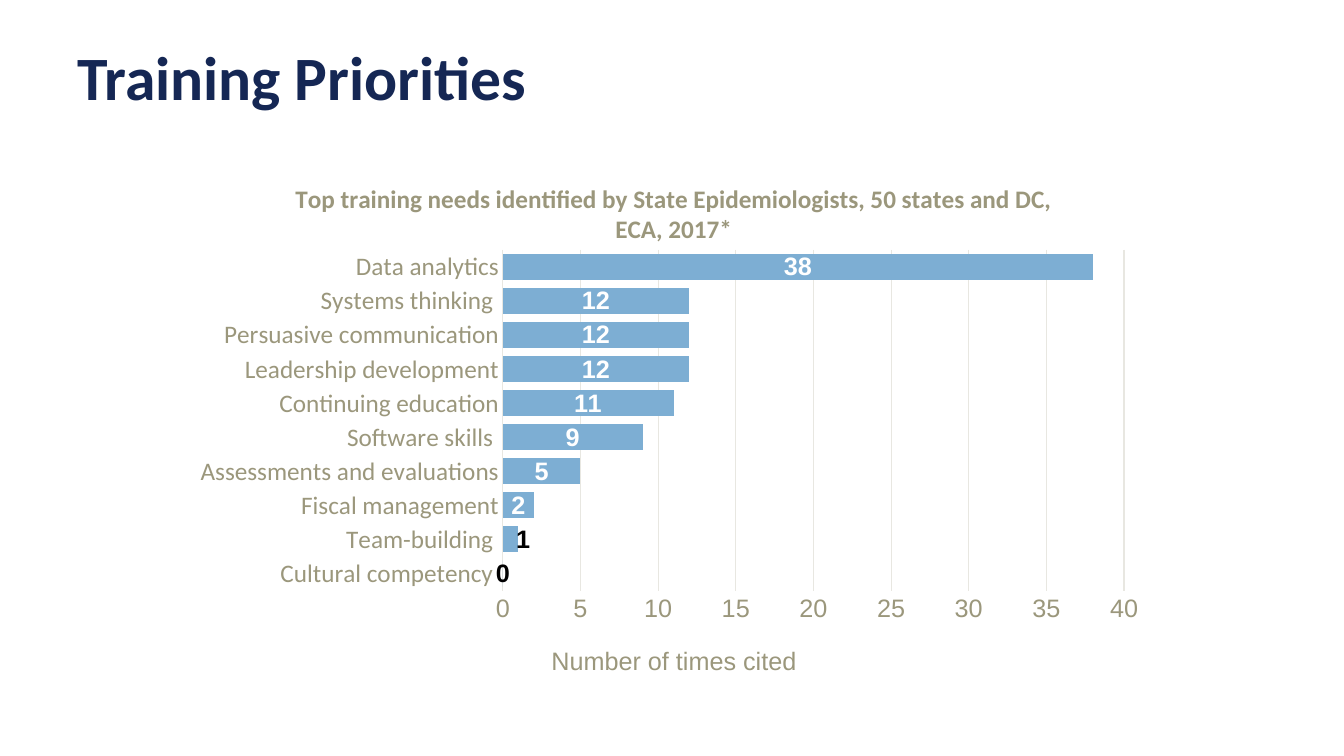
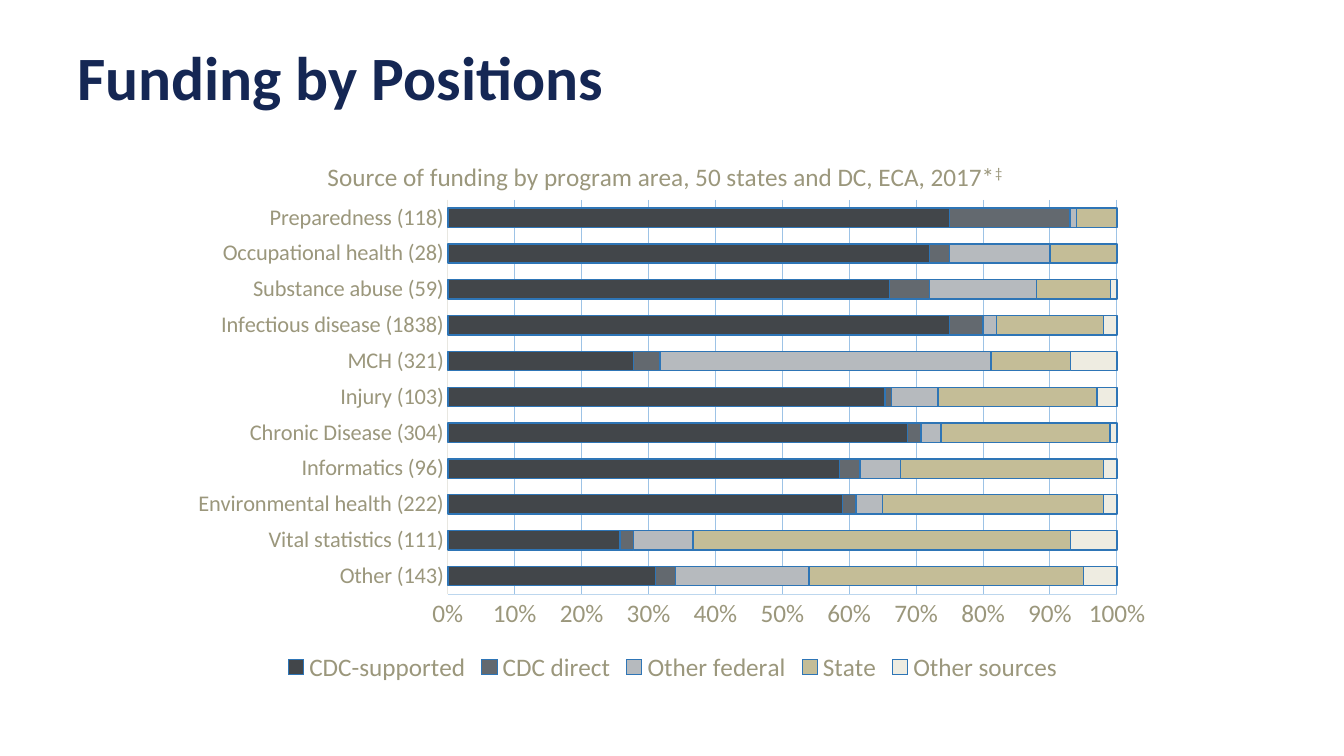
"""Build two survey slides, each with a title and a bar chart."""
from lxml import etree
from pptx import Presentation
from pptx.chart.data import CategoryChartData
from pptx.dml.color import RGBColor
from pptx.enum.chart import XL_CHART_TYPE, XL_LABEL_POSITION, XL_LEGEND_POSITION, XL_TICK_MARK
from pptx.enum.text import MSO_ANCHOR, MSO_AUTO_SIZE, PP_ALIGN
from pptx.oxml.ns import qn
from pptx.util import Inches, Pt

CLUSTERED, STACKED = XL_CHART_TYPE.BAR_CLUSTERED, XL_CHART_TYPE.BAR_STACKED_100
CENTER, BOTTOM, NO_TICK = XL_LABEL_POSITION.CENTER, XL_LEGEND_POSITION.BOTTOM, XL_TICK_MARK.NONE
LEFT, MIDDLE, NO_AUTOFIT = PP_ALIGN.LEFT, MSO_ANCHOR.MIDDLE, MSO_AUTO_SIZE.NONE

COLORS = {
    "navy": "152754", "olive": "9B977C", "body": "585543", "rule": "E8E7E1",
    "blue": "7DAED3", "outline": "2E75B6", "pale blue": "BDD7EE", "grid blue": "9DC3E6",
    "charcoal": "42464A", "slate": "63696F", "silver": "B6BABE", "sand": "C4BD97",
    "ivory": "EEECE1", "white": "FFFFFF", "black": "000000",
}
TITLE_BOX = (5, 2.53, 90, 15.07)

SLIDES = [
    {
        "title": "Training Priorities",
        "type": CLUSTERED, "box": (13.5, 20.13, 72.68, 71.07), "gap": 30, "overlap": 0,
        "plot": (32.9, 18.2, 63.6, 63.4),
        "heading": "Top training needs identified by State Epidemiologists, 50 states and DC, ECA, 2017*",
        "heading mark": "", "heading bold": True, "heading place": (11.2, 4.5),
        "categories": [
            "Cultural competency ", "Team-building ", "Fiscal management",
            "Assessments and evaluations", "Software skills ", "Continuing education",
            "Leadership development", "Persuasive communication", "Systems thinking ",
            "Data analytics"],
        "category size": 18, "value font": "Arial", "maximum": 40, "step": 5, "format": "General",
        "axis line": None, "grid line": "rule", "series line": None,
        "series": [("Series 1", "blue", [0, 1, 2, 5, 9, 11, 12, 12, 12, 38])],
        "axis title": "Number of times cited", "axis title place": (37.4, 90.8),
        "dark label shifts": {0: 0, 1: 1.3}, "legend": False,
    },
    {
        "title": "Funding by Positions",
        "type": STACKED, "box": (13.35, 17.47, 73.43, 73.47), "gap": 86, "overlap": 100,
        "plot": (27.2, 12.2, 67.8, 71),
        "heading": "Source of funding by program area, 50 states and DC, ECA, 2017*",
        "heading mark": "‡", "heading bold": False, "heading place": (14.7, 4.5),
        "categories": [
            "Other (143)", "Vital statistics (111)", "Environmental health (222)",
            "Informatics (96)", "Chronic Disease (304)", "Injury (103)", "MCH (321)",
            "Infectious disease (1838)", "Substance abuse (59)", "Occupational health (28)",
            "Preparedness (118)"],
        "category size": 16, "value font": "Calibri", "maximum": 1, "step": 0.1, "format": "0%",
        "axis line": "pale blue", "grid line": "grid blue", "series line": "outline",
        "series": [
            ("CDC-supported", "charcoal", [31, 26, 59, 58, 68, 66, 28, 75, 66, 72, 75]),
            ("CDC direct", "slate", [3, 2, 2, 3, 2, 1, 4, 5, 6, 3, 18]),
            ("Other federal", "silver", [20, 9, 4, 6, 3, 7, 50, 2, 16, 15, 1]),
            ("State", "sand", [41, 57, 33, 30, 25, 24, 12, 16, 11, 10, 6]),
            ("Other sources", "ivory", [5, 7, 2, 2, 1, 3, 7, 2, 1, 0, 0])],
        "axis title": None, "dark label shifts": {}, "legend": True,
    },
]


def style(font, color, size=18, name="Calibri", bold=False):
    """Set the look of a font."""
    for attribute, value in {"size": Pt(size), "name": name, "bold": bold}.items():
        setattr(font, attribute, value)
    font.color.rgb = RGBColor.from_string(COLORS[color])


def arrange(parent, index, shares, edge=True):
    """Give a chart part a manual layout, in percent of the chart."""
    for old in parent.findall(qn("c:layout")):
        parent.remove(old)
    layout = etree.Element(qn("c:layout"))
    manual = etree.SubElement(layout, qn("c:manualLayout"))
    settings = [("layoutTarget", "inner")] if len(shares) == 4 else []
    if edge:
        settings += [("xMode", "edge"), ("yMode", "edge")]
    settings += [(key, str(round(share / 100, 4))) for key, share in zip("xywh", shares)]
    for key, value in settings:
        etree.SubElement(manual, qn("c:" + key)).set("val", value)
    parent.insert(index, layout)


presentation = Presentation()
presentation.slide_width, presentation.slide_height = Inches(13.33), Inches(7.5)
units = (presentation.slide_width / 100, presentation.slide_height / 100) * 2

for content in SLIDES:
    slide = presentation.slides.add_slide(presentation.slide_layouts[5])
    title = slide.shapes.title
    title_box = [int(share * unit) for share, unit in zip(TITLE_BOX, units)]
    for attribute, value in zip(("left", "top", "width", "height"), title_box):
        setattr(title, attribute, value)
    title.text_frame.text = content["title"]
    title.text_frame.vertical_anchor = MIDDLE
    title.text_frame.auto_size = NO_AUTOFIT
    paragraph = title.text_frame.paragraphs[0]
    paragraph.alignment = LEFT
    style(paragraph.runs[0].font, "navy", 44, bold=True)

    data = CategoryChartData()
    data.categories = content["categories"]
    for name, color, values in content["series"]:
        data.add_series(name, values)
    chart_box = [int(share * unit) for share, unit in zip(content["box"], units)]
    chart = slide.shapes.add_chart(content["type"], *chart_box, data).chart
    style(chart.font, "body", 10, "Arial")

    paragraph = chart.chart_title.text_frame.paragraphs[0]
    for text in filter(None, (content["heading"], content["heading mark"])):
        run = paragraph.add_run()
        run.text = text
        style(run.font, "olive", bold=content["heading bold"])
    if content["heading mark"]:
        run.font._element.set("baseline", "30000")
    chart.chart_title.include_in_layout = False
    arrange(chart.chart_title._element, 1, content["heading place"])

    plot = chart.plots[0]
    for attribute, value in {"gap_width": content["gap"], "overlap": content["overlap"],
                             "vary_by_categories": False}.items():
        setattr(plot, attribute, value)
    arrange(plot._element.getparent(), 0, content["plot"])

    category_axis, value_axis = chart.category_axis, chart.value_axis
    for axis in (category_axis, value_axis):
        axis.major_tick_mark = axis.minor_tick_mark = NO_TICK
    style(category_axis.tick_labels.font, "olive", content["category size"])
    style(value_axis.tick_labels.font, "olive", name=content["value font"])
    value_axis.tick_labels.number_format = content["format"]
    value_axis.tick_labels.number_format_is_linked = False
    for attribute, value in {"minimum_scale": 0, "maximum_scale": content["maximum"],
                             "major_unit": content["step"], "has_major_gridlines": True}.items():
        setattr(value_axis, attribute, value)

    lines = [(category_axis.format.line, "rule", 0.75),
             (value_axis.format.line, content["axis line"], 0.75),
             (value_axis.major_gridlines.format.line, content["grid line"], 0.75)]
    for series, (name, color, values) in zip(plot.series, content["series"]):
        series.format.fill.solid()
        series.format.fill.fore_color.rgb = RGBColor.from_string(COLORS[color])
        series.invert_if_negative = False
        lines.append((series.format.line, content["series line"], 1))
    for line, color, width in lines:
        if color:
            line.color.rgb = RGBColor.from_string(COLORS[color])
            line.width = Pt(width)
        else:
            line.fill.background()

    if content["axis title"]:
        paragraph = value_axis.axis_title.text_frame.paragraphs[0]
        run = paragraph.add_run()
        run.text = content["axis title"]
        style(run.font, "olive", name="Arial")
        arrange(value_axis.axis_title._element, 1, content["axis title place"])

    if content["dark label shifts"]:
        series = plot.series[0]
        labels = series.data_labels
        labels.show_value = True
        labels.position = CENTER
        style(labels.font, "white", name="Arial", bold=True)
        for index, shift in content["dark label shifts"].items():
            label = series.points[index].data_label
            style(label.font, "black", name="Arial", bold=True)
            label.position = CENTER
            if shift:
                arrange(labels._element.findall(qn("c:dLbl"))[index], 1, (shift, 0), False)

    chart.has_legend = content["legend"]
    if chart.has_legend:
        chart.legend.position = BOTTOM
        chart.legend.include_in_layout = False
        style(chart.legend.font, "olive")

presentation.save("out.pptx")
